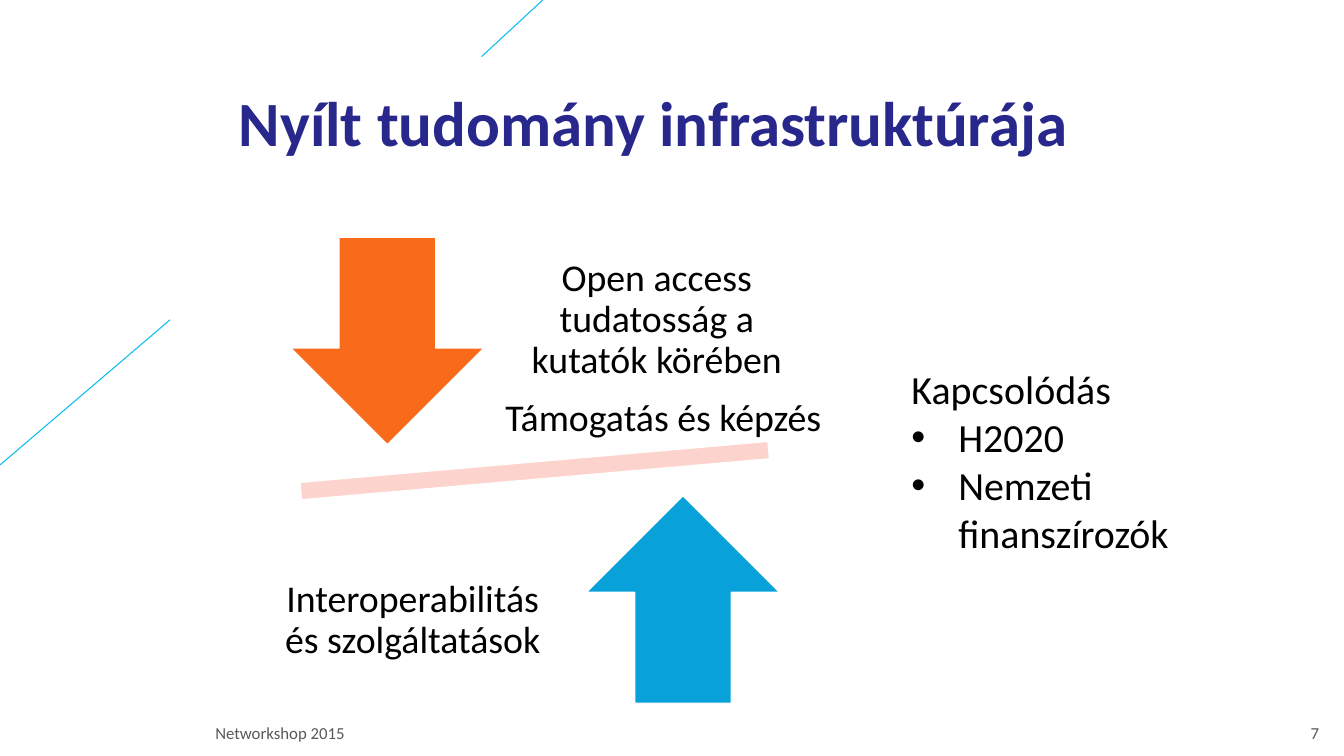
from lxml import etree
from pptx import Presentation
from pptx.dml.color import RGBColor
from pptx.enum.shapes import MSO_CONNECTOR, MSO_SHAPE
from pptx.enum.text import MSO_ANCHOR, MSO_AUTO_SIZE, PP_ALIGN
from pptx.oxml.ns import qn
from pptx.util import Pt

EMU_PER_PX = 9144  # 100 px to the inch
TITLE_ONLY = 5

STRAIGHT = MSO_CONNECTOR.STRAIGHT
MINUS, DOWN, UP = MSO_SHAPE.MATH_MINUS, MSO_SHAPE.DOWN_ARROW, MSO_SHAPE.UP_ARROW
TOP, MIDDLE, BOTTOM = MSO_ANCHOR.TOP, MSO_ANCHOR.MIDDLE, MSO_ANCHOR.BOTTOM
LEFT, CENTER = PP_ALIGN.LEFT, PP_ALIGN.CENTER

WHITE = RGBColor(0xFF, 0xFF, 0xFF)
BLACK = RGBColor(0x00, 0x00, 0x00)
GREY = RGBColor(0x59, 0x59, 0x59)
NAVY = RGBColor(0x28, 0x28, 0x8C)
CYAN = RGBColor(0x0A, 0xBE, 0xF0)
PINK = RGBColor(0xFD, 0xD4, 0xCD)
ORANGE = RGBColor(0xF9, 0x6A, 0x1B)
BLUE = RGBColor(0x08, 0xA1, 0xD9)


def px(*lengths):
    return [length * EMU_PER_PX for length in lengths]


class PageBuilder:
    font = "Calibri"
    line_width = Pt(1)

    def __init__(self, page):
        self.page = page

    def style(self, para, size, color, align=LEFT, bold=False):
        para.alignment = align
        for span in para.runs:
            span.font.name = self.font
            span.font.size = Pt(size)
            span.font.bold = bold
            span.font.color.rgb = color

    def title(self, area, text):
        box = self.page.shapes.title
        box.left, box.top, box.width, box.height = px(*area)
        frame = box.text_frame
        frame.text = text
        frame.auto_size = MSO_AUTO_SIZE.NONE
        frame.vertical_anchor = BOTTOM
        self.style(frame.paragraphs[0], 60, NAVY, bold=True)

    def text(self, area, lines, size, color=BLACK, align=LEFT, anchor=TOP,
             inset=None, spacing=None):
        frame = self.page.shapes.add_textbox(*px(*area)).text_frame
        frame.word_wrap = True
        frame.vertical_anchor = anchor
        if inset is not None:
            (frame.margin_left, frame.margin_top,
             frame.margin_right, frame.margin_bottom) = px(*[inset] * 4)
        frame.text = "\n".join(lines)
        for para in frame.paragraphs:
            if spacing:
                para.line_spacing = spacing
            self.style(para, size, color, align)
        return frame

    def bullet(self, para, indent):
        properties = para._p.get_or_add_pPr()
        hang = px(indent)[0]
        properties.set("marL", str(hang))
        properties.set("indent", str(-hang))
        etree.SubElement(properties, qn("a:buFont"), typeface="Arial")
        etree.SubElement(properties, qn("a:buChar"), char="•")

    def shape(self, kind, area, fill, rotation=0):
        shape = self.page.shapes.add_shape(kind, *px(*area))
        shape.shadow.inherit = False
        shape.rotation = rotation
        shape.fill.solid()
        shape.fill.fore_color.rgb = fill
        shape.line.color.rgb = WHITE
        shape.line.width = self.line_width

    def line(self, start, end):
        line = self.page.shapes.add_connector(STRAIGHT, *px(*start, *end))
        line.line.color.rgb = CYAN
        line.line.width = self.line_width
        etree.SubElement(line._element.spPr, qn("a:effectLst"))


def main():
    deck = Presentation()
    deck.slide_width, deck.slide_height = px(1778, 1000)
    builder = PageBuilder(deck.slides.add_slide(deck.slide_layouts[TITLE_ONLY]))

    # Decorative lines
    builder.line((0, 615), (225, 423))
    builder.line((637, 75), (718, 0))

    # Title and footer
    builder.title((306, 35, 1323, 181), "Nyílt tudomány infrastruktúrája")
    builder.text((275, 943, 1394, 53), ["Networkshop 2015"], 16, GREY, anchor=MIDDLE)
    builder.text((1700, 943, 79, 53), ["7"], 16, GREY, CENTER, MIDDLE)

    # Balance: tilted bar, opposing arrows and their labels
    builder.shape(MINUS, (285, 574, 845, 97), PINK, rotation=355)
    builder.shape(DOWN, (385, 314, 255, 274), ORANGE)
    builder.shape(UP, (776, 656, 255, 274), BLUE)
    label = {"size": 36, "align": CENTER, "anchor": MIDDLE, "inset": 28, "spacing": 0.9}
    builder.text((644, 280, 450, 288), ["Open access tudatosság a kutatók körében"], **label)
    builder.text((335, 677, 422, 288), ["Interoperabilitás és szolgáltatások"], **label)
    builder.text((598, 516, 559, 71), ["Támogatás és képzés"], 36, align=CENTER)

    # Funding links
    links = builder.text((1196, 478, 520, 266),
                         ["Kapcsolódás", "H2020", "Nemzeti finanszírozók"], 38)
    for para in links.paragraphs[1:]:
        builder.bullet(para, 62)

    deck.save("out.pptx")


if __name__ == "__main__":
    main()
